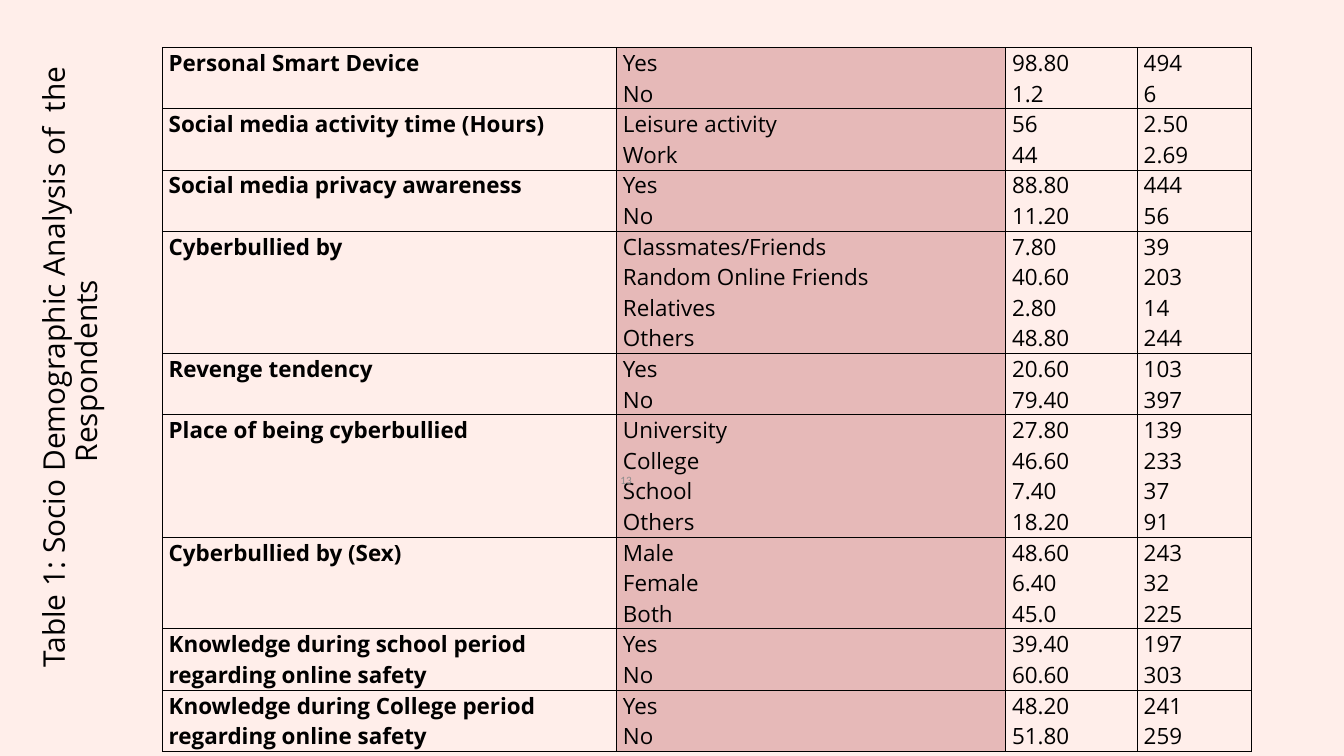
from lxml.etree import SubElement
from pptx import Presentation
from pptx.dml.color import RGBColor
from pptx.enum.text import MSO_ANCHOR, PP_ALIGN
from pptx.oxml.ns import qn
from pptx.util import Emu, Pt

EMU_PER_PX = 9525
COLORS = {
    "background": "FFEEEA",
    "answer": "E6B9B8",
    "text": "000000",
    "number": "8C8C8C",
}
TITLE = " Table 1: Socio Demographic Analysis of  the Respondents"
COLUMN_WIDTHS = [649, 556, 188, 163]
LINE_HEIGHT = 30
ROW_PADDING = 4
CELL_INSET = 9
QUESTIONS = [
    ("Personal Smart Device", [("Yes", "98.80", "494"), ("No", "1.2", "6")]),
    ("Social media activity time (Hours)", [("Leisure activity", "56", "2.50"), ("Work", "44", "2.69")]),
    ("Social media privacy awareness", [("Yes", "88.80", "444"), ("No", "11.20", "56")]),
    ("Cyberbullied by", [
        ("Classmates/Friends", "7.80", "39"),
        ("Random Online Friends", "40.60", "203"),
        ("Relatives", "2.80", "14"),
        ("Others", "48.80", "244"),
    ]),
    ("Revenge tendency", [("Yes", "20.60", "103"), ("No", "79.40", "397")]),
    ("Place of being cyberbullied", [
        ("University", "27.80", "139"),
        ("College", "46.60", "233"),
        ("School", "7.40", "37"),
        ("Others", "18.20", "91"),
    ]),
    ("Cyberbullied by (Sex)", [("Male", "48.60", "243"), ("Female", "6.40", "32"), ("Both", "45.0", "225")]),
    ("Knowledge during school period regarding online safety", [("Yes", "39.40", "197"), ("No", "60.60", "303")]),
    ("Knowledge during College period regarding online safety", [("Yes", "48.20", "241"), ("No", "51.80", "259")]),
]


def px(length):
    """Turn whole pixels into EMU."""
    return Emu(length * EMU_PER_PX)


def color(name):
    """Look up a named colour."""
    return RGBColor.from_string(COLORS[name])


def write_text(frame, lines, size=24, font="Open Sans", fill="text", bold=False,
               align=PP_ALIGN.LEFT, spacing=1.0):
    """Write one formatted paragraph per line into a text frame."""
    frame.word_wrap = True
    for index, line in enumerate(lines):
        paragraph = frame.paragraphs[0] if index == 0 else frame.add_paragraph()
        paragraph.alignment = align
        paragraph.line_spacing = spacing
        run = paragraph.add_run()
        run.text = line
        run.font.size = Pt(size)
        run.font.name = font
        run.font.bold = bold
        run.font.color.rgb = color(fill)


def add_borders(cell):
    """Draw a thin line on all four sides of a cell."""
    properties = cell._tc.get_or_add_tcPr()
    for side in ("a:lnL", "a:lnR", "a:lnT", "a:lnB"):
        line = SubElement(properties, qn(side), w=str(Pt(1)))
        solid = SubElement(line, qn("a:solidFill"))
        SubElement(solid, qn("a:srgbClr"), val=COLORS["text"])


def format_cell(cell, lines, bold=False, fill=None):
    """Fill one table cell with its lines, borders and background."""
    cell.margin_left = cell.margin_right = px(CELL_INSET)
    cell.margin_top = cell.margin_bottom = 0
    write_text(cell.text_frame, lines, bold=bold)
    add_borders(cell)
    if fill:
        cell.fill.solid()
        cell.fill.fore_color.rgb = color(fill)
    else:
        cell.fill.background()


def add_results_table(slide, left, top):
    """Add the table of questions, answers, percentages and counts."""
    heights = [len(answers) * LINE_HEIGHT + ROW_PADDING for _, answers in QUESTIONS]
    table = slide.shapes.add_table(
        len(QUESTIONS), len(COLUMN_WIDTHS), px(left), px(top),
        px(sum(COLUMN_WIDTHS)), px(sum(heights)),
    ).table
    table.first_row = table.horz_banding = False
    for column, width in zip(table.columns, COLUMN_WIDTHS):
        column.width = px(width)
    for row, height, (question, answers) in zip(table.rows, heights, QUESTIONS):
        row.height = px(height)
        labels, percentages, counts = zip(*answers)
        format_cell(row.cells[0], [question], bold=True)
        format_cell(row.cells[1], labels, fill="answer")
        format_cell(row.cells[2], percentages)
        format_cell(row.cells[3], counts)


def add_text_box(slide, left, top, width, height):
    """Add a text box and return its text frame."""
    return slide.shapes.add_textbox(*map(px, (left, top, width, height))).text_frame


def add_side_title(slide, left, top, width, height):
    """Add the table title, reading upwards along the left edge."""
    frame = add_text_box(slide, left, top, width, height)
    frame._txBody.bodyPr.set("vert", "vert270")
    write_text(frame, [TITLE], size=32, align=PP_ALIGN.CENTER, spacing=0.9)


def add_page_number(slide, number, left, top, width, height):
    """Add the small grey page number."""
    frame = add_text_box(slide, left, top, width, height)
    frame.vertical_anchor = MSO_ANCHOR.MIDDLE
    write_text(frame, [number], size=12, font="Calibri", fill="number", align=PP_ALIGN.RIGHT)


def main():
    """Build and save the slide."""
    presentation = Presentation()
    presentation.slide_width, presentation.slide_height = px(1920), px(1080)
    slide = presentation.slides.add_slide(presentation.slide_layouts[6])
    slide.background.fill.solid()
    slide.background.fill.fore_color.rgb = color("background")
    add_results_table(slide, 232, 68)
    add_side_title(slide, 51, 52, 123, 956)
    add_page_number(slide, "13", 688, 667, 224, 38)
    presentation.save("out.pptx")


if __name__ == "__main__":
    main()
